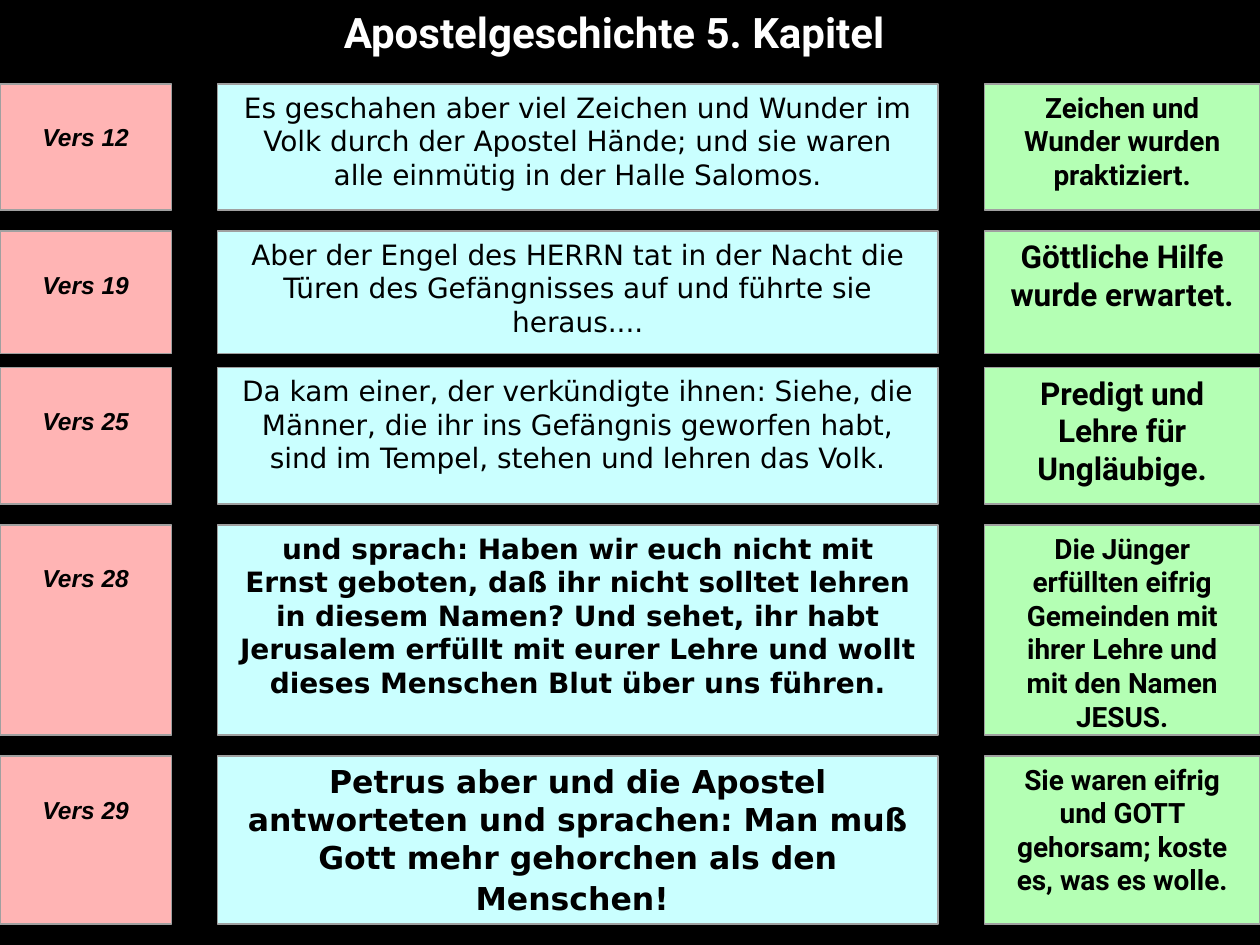
from dataclasses import dataclass

from pptx import Presentation
from pptx.dml.color import RGBColor
from pptx.enum.shapes import MSO_SHAPE
from pptx.enum.text import MSO_ANCHOR, PP_ALIGN
from pptx.util import Pt

COLORS = {
    "back": "000000", "title": "FFFFFF", "text": "000000", "frame": "A0A0A0",
    "verse": "FFB4B4", "quote": "CAFFFF", "lesson": "B4FFB4",
}
INSET = 4.7  # gap between a panel's side and its text block


@dataclass
class Column:
    name: str
    left: float
    width: float
    font: str
    top_margin: float = 3.6


@dataclass
class Row:
    top: float
    height: float
    verse: str
    quote: str
    lesson: str
    quote_size: int = 16
    lesson_size: int = 16
    quote_bold: bool = False
    tail_size: int = 0  # size of a space that ends the quote


VERSE = Column("verse", 0, 98, "Arial", 22)
QUOTE = Column("quote", 124.3, 411.8, "DejaVu Sans")
LESSON = Column("lesson", 562.5, 157.5, "Roboto")

ROWS = [
    Row(48, 72, "Vers 12",
        "Es geschahen aber viel Zeichen und Wunder im Volk durch der Apostel "
        "Hände; und sie waren alle einmütig in der Halle Salomos.",
        "Zeichen und Wunder wurden praktiziert."),
    Row(132, 70, "Vers 19",
        "Aber der Engel des HERRN tat in der Nacht die Türen des Gefängnisses "
        "auf und führte sie heraus....",
        "Göttliche Hilfe wurde erwartet.", lesson_size=18),
    Row(210, 78, "Vers 25",
        "Da kam einer, der verkündigte ihnen: Siehe, die Männer, die ihr ins "
        "Gefängnis geworfen habt, sind im Tempel, stehen und lehren das Volk.",
        "Predigt und Lehre für Ungläubige.", lesson_size=18),
    Row(300, 120, "Vers 28",
        "und sprach: Haben wir euch nicht mit Ernst geboten, daß ihr nicht "
        "solltet lehren in diesem Namen? Und sehet, ihr habt Jerusalem erfüllt "
        "mit eurer Lehre und wollt dieses Menschen Blut über uns führen.",
        "Die Jünger erfüllten eifrig Gemeinden mit ihrer Lehre und mit den "
        "Namen JESUS.", quote_bold=True),
    Row(432, 96, "Vers 29",
        "Petrus aber und die Apostel antworteten und sprachen: Man muß Gott "
        "mehr gehorchen als den Menschen!",
        "Sie waren eifrig und GOTT gehorsam; koste es, was es wolle.",
        quote_size=18, quote_bold=True, tail_size=20),
]


def rgb(name: str) -> RGBColor:
    return RGBColor.from_string(COLORS[name])


def add_run(p, text: str, color: str, **fmt) -> None:
    r = p.add_run()
    r.text = text
    r.font.color.rgb = rgb(color)
    for key, value in fmt.items():
        setattr(r.font, key, value)


def add_rect(shapes, left: float, top: float, width: float, height: float,
             fill: str = "", line: str = ""):
    sp = shapes.add_shape(MSO_SHAPE.RECTANGLE, Pt(left), Pt(top), Pt(width), Pt(height))
    sp.shadow.inherit = False
    if fill:
        sp.fill.solid()
        sp.fill.fore_color.rgb = rgb(fill)
    else:
        sp.fill.background()
    if line:
        sp.line.color.rgb = rgb(line)
        sp.line.width = Pt(0)
    else:
        sp.line.fill.background()
    return sp


def add_cell(shapes, col: Column, row: Row, text: str, **fmt):
    """Draw panel, text block and frame; return the text's paragraph."""
    add_rect(shapes, col.left, row.top, col.width, row.height, fill=col.name)
    sp = add_rect(shapes, col.left + INSET, row.top, col.width - 2 * INSET,
                  row.height, fill=col.name)
    add_rect(shapes, col.left, row.top, col.width, row.height, line="frame")
    tf = sp.text_frame
    tf.word_wrap = True
    tf.vertical_anchor = MSO_ANCHOR.TOP
    tf.margin_top = Pt(col.top_margin)
    p = tf.paragraphs[0]
    p.alignment = PP_ALIGN.CENTER
    add_run(p, text, "text", name=col.font, **fmt)
    return p


def add_row(slide, row: Row) -> None:
    shapes = slide.shapes.add_group_shape().shapes
    add_cell(shapes, VERSE, row, row.verse, size=Pt(14), bold=True, italic=True)
    p = add_cell(shapes, QUOTE, row, row.quote, size=Pt(row.quote_size),
                 bold=row.quote_bold)
    if row.tail_size:
        add_run(p, " ", "text", name=QUOTE.font, size=Pt(row.tail_size))
    add_cell(shapes, LESSON, row, row.lesson, size=Pt(row.lesson_size), bold=True)


def main() -> None:
    prs = Presentation()
    prs.slide_width, prs.slide_height = Pt(720), Pt(540)
    slide = prs.slides.add_slide(prs.slide_layouts[6])
    slide.background.fill.solid()
    slide.background.fill.fore_color.rgb = rgb("back")

    # Title
    tf = slide.shapes.add_textbox(Pt(168), Pt(0), Pt(366), Pt(36)).text_frame
    tf.word_wrap = True
    p = tf.paragraphs[0]
    p.alignment = PP_ALIGN.CENTER
    add_run(p, "Apostelgeschichte 5. Kapitel", "title", name="Roboto",
            size=Pt(24), bold=True)

    # Verses
    for row in ROWS:
        add_row(slide, row)
    prs.save("out.pptx")


if __name__ == "__main__":
    main()
